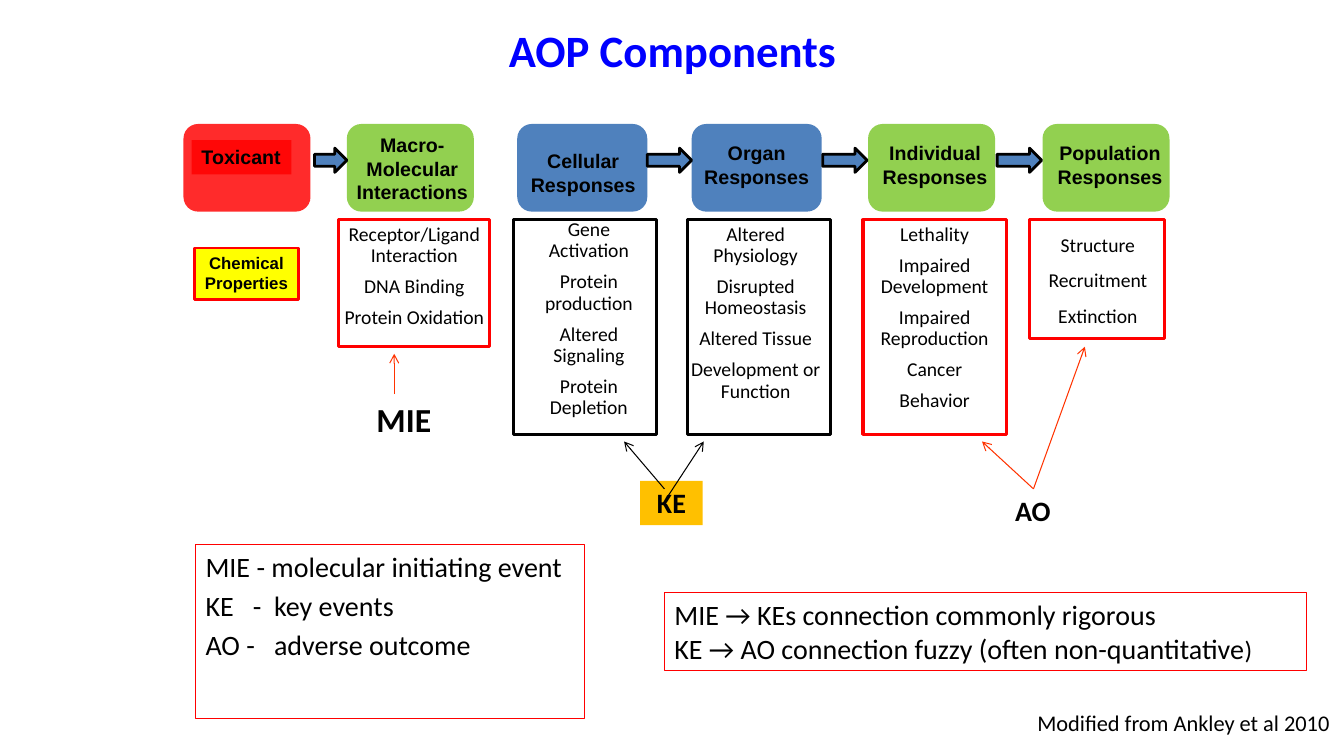
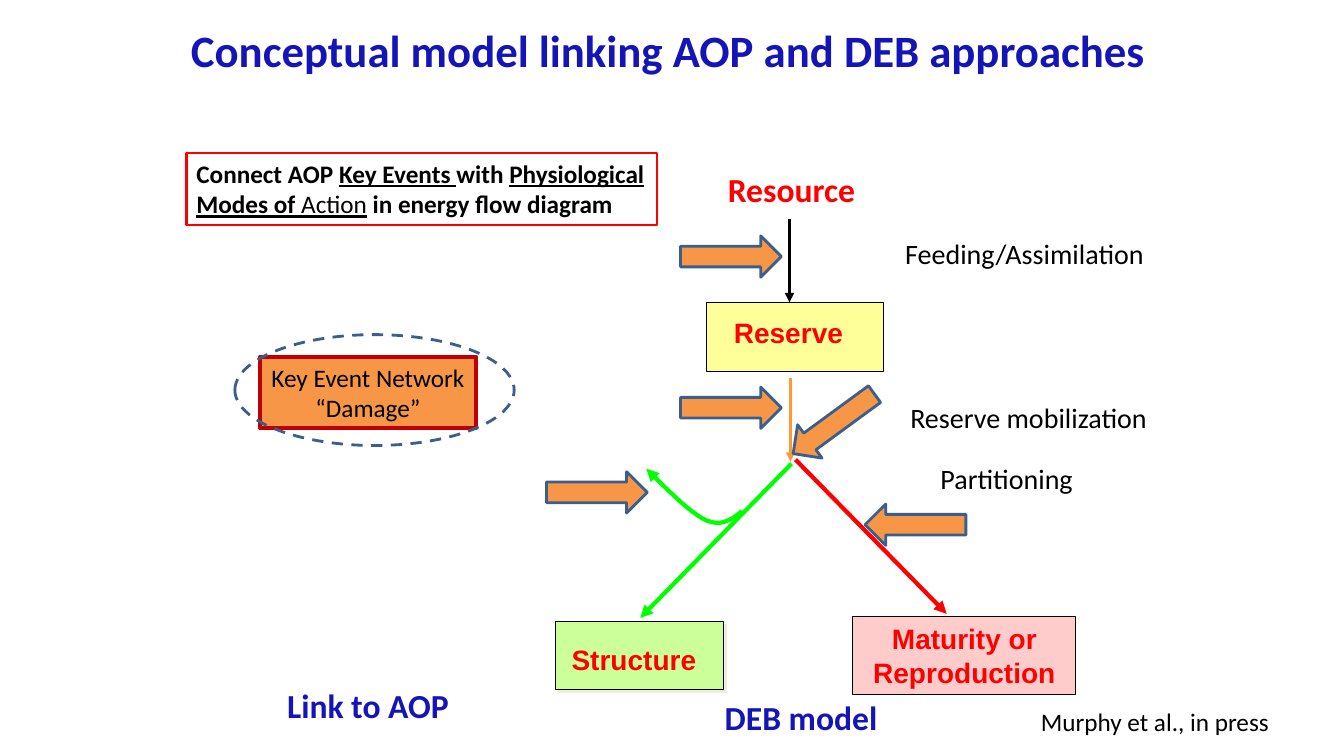
from lxml import etree
from pptx import Presentation
from pptx.dml.color import RGBColor
from pptx.enum.dml import MSO_LINE
from pptx.enum.shapes import MSO_CONNECTOR, MSO_SHAPE
from pptx.enum.text import MSO_ANCHOR, PP_ALIGN
from pptx.oxml.ns import qn
from pptx.util import Inches, Pt

RECTANGLE = MSO_SHAPE.RECTANGLE
ROUNDED = MSO_SHAPE.ROUNDED_RECTANGLE
ARROW = MSO_SHAPE.RIGHT_ARROW
ELLIPSE = MSO_SHAPE.OVAL
STRAIGHT = MSO_CONNECTOR.STRAIGHT
DASH = MSO_LINE.DASH
LEFT, CENTER = PP_ALIGN.LEFT, PP_ALIGN.CENTER
TOP, MIDDLE = MSO_ANCHOR.TOP, MSO_ANCHOR.MIDDLE

BLACK, RED, NAVY = "000000", "FF0000", "1515B7"
BLUE, GREEN, ORANGE = "4F81BD", "92D050", "F79646"
VERMILION, STEEL, LIME = "FF3300", "3A5F8C", "00FF00"
MARGINS = (0.1, 0.05, 0.1, 0.05)

# Components slide: left, width, fill, label lines, label inset (left, top)
STAGE_TOP, STAGE_HEIGHT = 1.23, 0.87
STAGES = [
    (3.44, 1.26, GREEN, ["Macro-", "Molecular", "Interactions"], (0.04, 0.05)),
    (5.13, 1.29, BLUE, ["Cellular", "Responses"], (0.02, 0.21)),
    (6.86, 1.29, BLUE, ["Organ", "Responses"], (0, 0.13)),
    (8.61, 1.26, GREEN, ["Individual", "Responses"], (0.07, 0.13)),
    (10.34, 1.26, GREEN, ["Population", "Responses"], (0.08, 0.13)),
]
STAGE_ARROWS = [(3.12, 0.32), (6.42, 0.44), (8.16, 0.44), (9.89, 0.44)]

# left, width, height, outline, margins, (line spacing, space after), examples
DETAIL_TOP = 2.18
LOOSE, TIGHT = (0.9, 7), (0.75, 12.8)
DETAILS = [
    (3.36, 1.5, 1.26, RED, (0, 0.05, 0, 0), LOOSE,
     ["Receptor/Ligand Interaction", "DNA Binding", "Protein Oxidation"]),
    (5.09, 1.42, 2.13, BLACK, (0.18, 0, 0.1, 0), LOOSE,
     ["Gene Activation", "Protein production", "Altered Signaling", "Protein Depletion"]),
    (6.82, 1.42, 2.13, BLACK, (0, 0.05, 0.07, 0), LOOSE,
     ["Altered Physiology", "Disrupted Homeostasis", "Altered Tissue",
      "Development or Function"]),
    (8.56, 1.42, 2.13, RED, (0, 0.05, 0, 0), LOOSE,
     ["Lethality", "Impaired Development", "Impaired Reproduction", "Cancer", "Behavior"]),
    (10.21, 1.34, 1.18, RED, (0.02, 0.18, 0, 0), TIGHT,
     ["Structure", "Recruitment", "Extinction"]),
]
EVENT_POINTERS = [
    ((3.91, 3.91), (3.91, 3.51), VERMILION),
    ((10.25, 4.85), (9.74, 4.38), VERMILION),
    ((10.25, 4.85), (10.76, 3.44), VERMILION),
    ((6.59, 4.85), (6.19, 4.38), BLACK),
    ((6.62, 4.93), (6.98, 4.38), BLACK),
]
DEFINITIONS = ["MIE - molecular initiating event", "KE\t-\tkey events",
               "AO -\tadverse outcome"]
CONNECTIONS = [
    "MIE → KEs connection commonly rigorous",
    [("KE → AO connection fuzzy (often non-quantitative", {}), (")", {"size": 18})],
]

# Energy flow slide
PURPOSE = [[
    ("Connect AOP ", {}), ("Key Events ", {"underline": True}), ("with ", {}),
    ("Physiological Modes of ", {"underline": True}),
    ("Action", {"underline": True, "bold": False}), (" in energy flow diagram", {}),
]]
# box, fill, label box, label lines, alignment
POOLS = [
    ((7.01, 3, 1.75, 0.69), "FFFF99", (7.18, 3.08, 1.58, 0.43), ["Reserve"], LEFT),
    ((5.51, 6.17, 1.67, 0.67), "CCFF99", (5.57, 6.32, 1.58, 0.43), ["Structure"], LEFT),
    ((8.46, 6.12, 2.21, 0.77), "FFCCCC", None, ["Maturity or Reproduction"], CENTER),
]
FLOWS = [
    ((7.83, 2.17), (7.83, 3), BLACK, 2.25),
    ((7.84, 3.75), (7.84, 4.58), "FF9933", 2.25),
    ((7.85, 4.6), (6.35, 6.13), LIME, 3),
    ((7.89, 4.56), (9.39, 6.09), RED, 3),
]
RETURN_FLOW = [
    [(7.36, 5.07), (7.26, 5.15), (7.16, 5.23), (7, 5.16)],
    [(7, 5.16), (6.85, 5.09), (6.63, 4.87), (6.41, 4.65)],
]
STRESS_ARROWS = [(6.75, 2.34, 0), (6.75, 3.84, 0), (7.77, 4, 143.8),
                 (8.58, 5, 180), (5.42, 4.68, 0)]
PROCESSES = [
    ((8.88, 2.3, 2.6, 0.44), "Feeding/Assimilation"),
    ((8.93, 3.92, 2.57, 0.44), "Reserve mobilization"),
    ((9.23, 4.53, 1.53, 0.44), "Partitioning"),
]
SECTIONS = [
    ((6.93, 1.63, 1.84, 0.5), "Resource", RED),
    ((5.18, 6.86, 5.53, 0.5), "DEB model", NAVY),
    ((2.58, 6.75, 2.14, 0.5), "Link to AOP", NAVY),
]


def rgb(value):
    return RGBColor.from_string(value)


def add_xml(parent, tag, **attributes):
    names = {name: str(value) for name, value in attributes.items()}
    return etree.SubElement(parent, qn(tag), names)


def write_text(shape, paragraphs, size=14, font="Calibri", color=BLACK, bold=False,
               align=LEFT, anchor=TOP, margins=MARGINS, wrap=True,
               line_spacing=None, space_before=0, space_after=0, tabs=()):
    """Fill a shape; a paragraph is a string or a list of (text, overrides)."""
    frame = shape.text_frame
    frame.word_wrap, frame.vertical_anchor = wrap, anchor
    (frame.margin_left, frame.margin_top,
     frame.margin_right, frame.margin_bottom) = map(Inches, margins)
    for index, content in enumerate(paragraphs):
        paragraph = frame.add_paragraph() if index else frame.paragraphs[0]
        paragraph.alignment = align
        paragraph.line_spacing = line_spacing
        paragraph.space_before = Pt(space_before)
        paragraph.space_after = Pt(space_after)
        if tabs:
            tab_list = add_xml(paragraph._p.get_or_add_pPr(), "a:tabLst")
            for position in tabs:
                add_xml(tab_list, "a:tab", pos=Inches(position), algn="l")
        for text, overrides in [(content, {})] if isinstance(content, str) else content:
            run = paragraph.add_run()
            run.text = text
            run.font.name = font
            run.font.size = Pt(overrides.get("size", size))
            run.font.bold = overrides.get("bold", bold)
            run.font.underline = overrides.get("underline", False)
            run.font.color.rgb = rgb(color)


def add_label(slide, box, paragraphs, **text_format):
    write_text(slide.shapes.add_textbox(*map(Inches, box)), paragraphs, **text_format)


def set_line(shape, color, width, dash=None, tip=None):
    shape.line.color.rgb = rgb(color)
    shape.line.width = Pt(width)
    if dash:
        shape.line.dash_style = dash
    if tip:
        add_xml(shape.line._get_or_add_ln(), "a:tailEnd", type=tip)


def add_box(slide, box, preset=RECTANGLE, fill=None, alpha=None, line=None, width=0.75,
            dash=None, rotation=0):
    shape = slide.shapes.add_shape(preset, *map(Inches, box))
    shape.shadow.inherit = False
    shape.rotation = rotation
    if fill:
        shape.fill.solid()
        shape.fill.fore_color.rgb = rgb(fill)
        if alpha:
            color = shape._element.spPr.find(qn("a:solidFill"))[0]
            add_xml(color, "a:alpha", val=alpha * 1000)
    else:
        shape.fill.background()
    if line:
        set_line(shape, line, width, dash)
    else:
        shape.line.fill.background()
    return shape


def add_pointer(slide, start, end, color, width=0.75, tip="arrow"):
    connector = slide.shapes.add_connector(STRAIGHT, *map(Inches, start + end))
    set_line(connector, color, width, tip=tip)
    add_xml(connector._element.spPr, "a:effectLst")


def curve_points(segment, steps=12):
    """Points along a cubic Bezier segment, without its start."""
    for step in range(1, steps + 1):
        t = step / steps
        weights = ((1 - t) ** 3, 3 * t * (1 - t) ** 2, 3 * t ** 2 * (1 - t), t ** 3)
        yield tuple(Inches(sum(weight * point[axis]
                               for weight, point in zip(weights, segment)))
                    for axis in (0, 1))


def add_curve(slide, segments, color, width):
    builder = slide.shapes.build_freeform(*map(Inches, segments[0][0]))
    for segment in segments:
        builder.add_line_segments(list(curve_points(segment)), close=False)
    shape = builder.convert_to_shape()
    shape.shadow.inherit = False
    shape.fill.background()
    set_line(shape, color, width, tip="triangle")


def add_soft_shadow(shape, color):
    effects = shape._element.spPr.find(qn("a:effectLst"))
    shadow = add_xml(effects, "a:outerShdw", dist=Pt(2.8), dir=45 * 60000)
    add_xml(shadow, "a:srgbClr", val=color)


def add_titled_slide(presentation, title, left, color):
    slide = presentation.slides.add_slide(presentation.slide_layouts[6])
    add_label(slide, (left, 0.17, 9.86, 0.64), [title], size=32, color=color, bold=True,
              align=CENTER, anchor=MIDDLE)
    return slide


def build_components(presentation):
    slide = add_titled_slide(presentation, "AOP Components", 1.74, "0000FF")
    stage_text = dict(font="Arial", bold=True, wrap=False)

    add_box(slide, (1.82, STAGE_TOP, 1.26, STAGE_HEIGHT), ROUNDED, RED, alpha=83)
    toxicant = add_box(slide, (1.9, 1.39, 0.99, 0.34), fill=RED, alpha=83)
    write_text(toxicant, ["Toxicant"], **stage_text)
    chemical = add_box(slide, (1.93, 2.46, 1.03, 0.51), fill="FFFF00", line=RED, width=2)
    write_text(chemical, ["Chemical", "Properties"], size=12, align=CENTER, **stage_text)

    for left, width, fill, lines, (inset_left, inset_top) in STAGES:
        stage = add_box(slide, (left, STAGE_TOP, width, STAGE_HEIGHT), ROUNDED, fill)
        write_text(stage, lines, align=CENTER, margins=(inset_left, inset_top, 0, 0),
                   **stage_text)
    for left, width in STAGE_ARROWS:
        add_box(slide, (left, 1.47, width, 0.24), ARROW, BLUE, line=BLACK, width=2)
    for left, width, height, color, margins, (spacing, after), examples in DETAILS:
        detail = add_box(slide, (left, DETAIL_TOP, width, height), line=color, width=2.25)
        write_text(detail, examples, align=CENTER, margins=margins,
                   line_spacing=spacing, space_after=after)

    add_label(slide, (3.6, 3.91, 0.81, 0.5), ["MIE"], size=24, bold=True, align=CENTER)
    add_label(slide, (9.97, 4.85, 0.56, 0.44), ["AO"], size=20, bold=True, wrap=False)
    key_event = add_box(slide, (6.35, 4.77, 0.62, 0.44), fill="FFC000")
    write_text(key_event, ["KE"], size=20, bold=True, align=CENTER)
    for start, end, color in EVENT_POINTERS:
        add_pointer(slide, start, end, color)

    definitions = add_box(slide, (1.94, 5.4, 3.86, 1.73), line=RED)
    write_text(definitions, DEFINITIONS, size=20, space_before=4, tabs=(0.47, 0.68))
    connections = add_box(slide, (6.59, 5.88, 6.37, 0.77), line=RED)
    write_text(connections, CONNECTIONS, size=20)
    add_label(slide, (10.19, 6.99, 3.14, 0.37), ["Modified from Ankley et al 2010"],
              size=16, wrap=False)


def build_energy_flow(presentation):
    slide = add_titled_slide(
        presentation, "Conceptual model linking AOP and DEB approaches", 1.7, NAVY)

    network = add_box(slide, (2.58, 3.54, 2.14, 0.71), fill=ORANGE, line="C00000", width=3)
    write_text(network, ["Key Event Network", "“Damage”"], size=18, align=CENTER,
               wrap=False)
    add_box(slide, (2.33, 3.32, 2.77, 1.1), ELLIPSE, line=STEEL, width=2, dash=DASH)
    purpose = add_box(slide, (1.85, 1.52, 4.67, 0.71), line=RED, width=1.5)
    write_text(purpose, PURPOSE, size=18, bold=True)

    for box, fill, label_box, lines, align in POOLS:
        pool = add_box(slide, box, fill=fill, line=BLACK)
        pool_text = dict(size=20, font="Arial", color=RED, bold=True, align=align)
        if label_box:
            add_label(slide, label_box, lines, **pool_text)
        else:
            write_text(pool, lines, **pool_text)
        if lines == ["Structure"]:
            add_soft_shadow(pool, "EEECE1")

    for start, end, color, width in FLOWS:
        add_pointer(slide, start, end, color, width, tip="triangle")
    add_curve(slide, RETURN_FLOW, LIME, 3)
    for left, top, rotation in STRESS_ARROWS:
        add_box(slide, (left, top, 1, 0.41), ARROW, ORANGE, line=STEEL, width=2,
                rotation=rotation)

    for box, process in PROCESSES:
        add_label(slide, box, [process], size=20, wrap=False)
    for box, section, color in SECTIONS:
        add_label(slide, box, [section], size=24, color=color, bold=True, align=CENTER)
    add_label(slide, (9.69, 6.96, 3.53, 0.4), ["Murphy et al., in press"], size=18,
              align=CENTER)


def main():
    presentation = Presentation()
    presentation.slide_width, presentation.slide_height = Inches(13.33), Inches(7.5)
    build_components(presentation)
    build_energy_flow(presentation)
    presentation.save("out.pptx")


if __name__ == "__main__":
    main()
